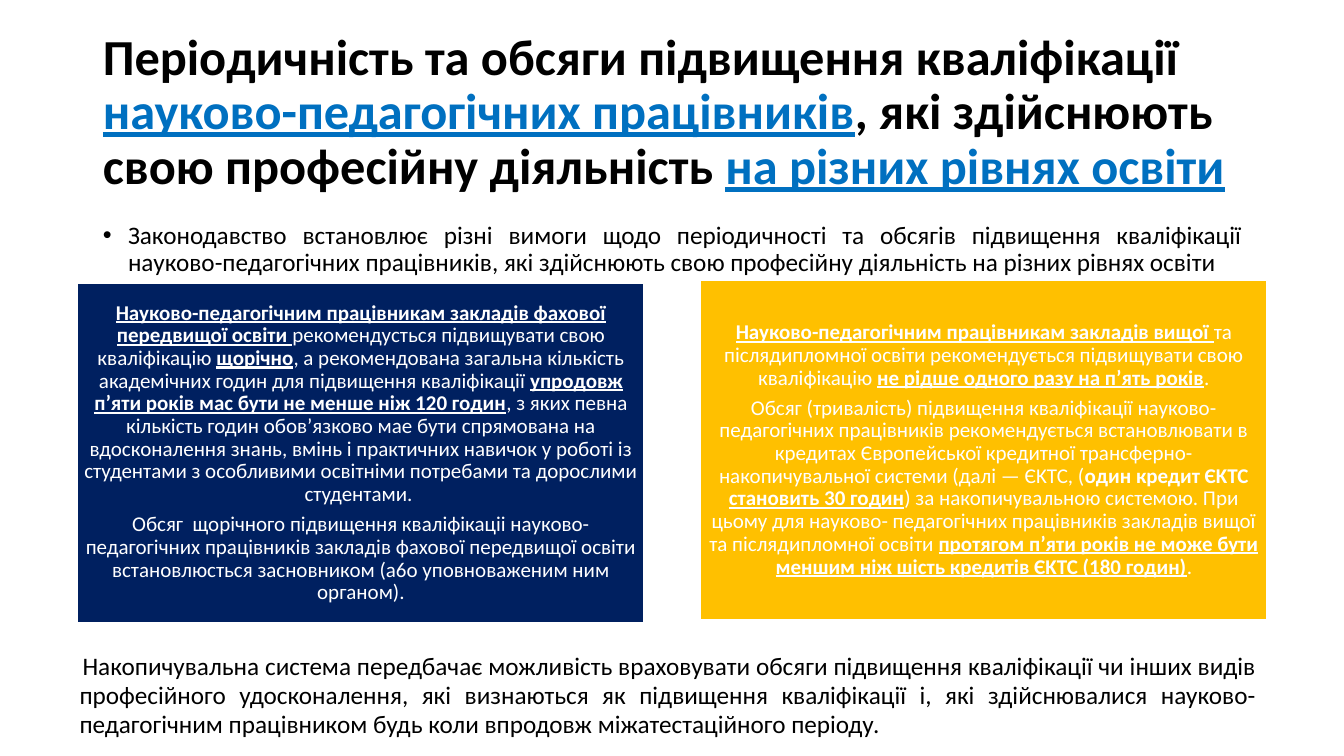
from pptx import Presentation
from pptx.dml.color import RGBColor
from pptx.enum.shapes import MSO_SHAPE
from pptx.enum.text import MSO_ANCHOR, MSO_AUTO_SIZE, PP_ALIGN
from pptx.util import Inches, Pt

RECTANGLE = MSO_SHAPE.RECTANGLE
TOP, MIDDLE = MSO_ANCHOR.TOP, MSO_ANCHOR.MIDDLE
FIXED = MSO_AUTO_SIZE.NONE
LEFT, CENTER, JUSTIFY = PP_ALIGN.LEFT, PP_ALIGN.CENTER, PP_ALIGN.JUSTIFY

BLACK = RGBColor(0x00, 0x00, 0x00)
WHITE = RGBColor(0xFF, 0xFF, 0xFF)
BLUE = RGBColor(0x00, 0x70, 0xC0)
NAVY = RGBColor(0x00, 0x20, 0x60)
AMBER = RGBColor(0xFF, 0xC0, 0x00)

FONT = "Calibri"
SLIDE_WIDTH, SLIDE_HEIGHT = Inches(13.33), Inches(7.5)
TITLE_AREA = (6.9, 5.33, 86.25, 19.33)
BODY_AREA = (6.9, 28.8, 86.25, 9.73)
CARD_WIDTH, CARD_HEIGHT = 42.15, 44.93
NOTE_AREA = (4.58, 85.6, 89.63, 12.93)

PLAIN, BOLD, KEY = (False, False), (True, False), (True, True)

TITLE = [
    ("Періодичність та обсяги підвищення кваліфікації ", BOLD, BLACK),
    ("науково-педагогічних працівників", KEY, BLUE),
    (", які здійснюють свою професійну діяльність ", BOLD, BLACK),
    ("на різних рівнях освіти", KEY, BLUE),
]
INTRODUCTION = [
    ("Законодавство встановлює різні вимоги щодо періодичності та обсягів "
     "підвищення кваліфікації науково-педагогічних працівників, які здійснюють "
     "свою професійну діяльність на різних рівнях освіти", PLAIN, BLACK),
]
COLLEGE_RULES = [
    [
        ("Науково-педагогічним працівникам закладів фахової передвищої освіти ", KEY, WHITE),
        ("рекомендусться підвищувати свою кваліфікацію ", PLAIN, WHITE),
        ("щорічно", KEY, WHITE),
        (", а рекомендована загальна кількість академічних годин для підвищення "
         "кваліфікації ", PLAIN, WHITE),
        ("упродовж п’яти років мас бути не менше ніж 120 годин", KEY, WHITE),
        (", з яких певна кількість годин обов’язково мае бути спрямована на "
         "вдосконалення знань, вмінь i практичних навичок у роботі із студентами "
         "з особливими освітніми потребами та дорослими студентами. ", PLAIN, WHITE),
    ],
    [
        ("Обсяг  щорічного підвищення кваліфікаціі науково-педагогічних працівників "
         "закладів фахової передвищої освіти встановлюсться засновником (a6o "
         "уповноваженим ним органом).", PLAIN, WHITE),
    ],
]
UNIVERSITY_RULES = [
    [
        ("Науково-педагогічним працівникам закладів вищої ", KEY, WHITE),
        ("та післядипломної освіти рекомендується підвищувати свою кваліфікацію ",
         PLAIN, WHITE),
        ("не рідше одного разу на п’ять років", KEY, WHITE),
        (".", PLAIN, WHITE),
    ],
    [
        ("Обсяг (тривалість) підвищення кваліфікації науково-педагогічних працівників "
         "рекомендується встановлювати в кредитах Європейської кредитної "
         "трансферно-накопичувальної системи (далі — ЄKTC, (", PLAIN, WHITE),
        ("один кредит ЄKTC ", BOLD, WHITE),
        ("становить 30 годин", KEY, WHITE),
        (") за накопичувальною системою. При цьому для науково- педагогічних "
         "працівників закладів вищої та післядипломної освіти ", PLAIN, WHITE),
        ("протягом п’яти років не може бути меншим ніж шість кредитів ЄKTC "
         "(180 годин)", KEY, WHITE),
        (".", PLAIN, WHITE),
    ],
]
NOTE = [
    ("Накопичувальна система передбачає можливість враховувати обсяги підвищення "
     "кваліфікації чи інших видів професійного удосконалення, які визнаються як "
     "підвищення кваліфікації i, які здійснювалися науково- педагогічним "
     "працівником будь коли впродовж міжатестаційного періоду.", PLAIN, BLACK),
]
CARDS = [
    (5.78, 37.47, NAVY, COLLEGE_RULES),
    (52.13, 37.07, AMBER, UNIVERSITY_RULES),
]


def to_lengths(area):
    left, top, width, height = area
    return (int(SLIDE_WIDTH * left / 100), int(SLIDE_HEIGHT * top / 100),
            int(SLIDE_WIDTH * width / 100), int(SLIDE_HEIGHT * height / 100))


def move(shape, area):
    shape.left, shape.top, shape.width, shape.height = to_lengths(area)


def write_paragraph(paragraph, segments, size, alignment, line_spacing=0.9,
                    before=0, after=0):
    paragraph.alignment = alignment
    paragraph.line_spacing = line_spacing
    paragraph.space_before, paragraph.space_after = Pt(before), Pt(after)
    for text, (bold, underline), color in segments:
        run = paragraph.add_run()
        run.text = text
        font = run.font
        font.name, font.size = FONT, Pt(size)
        font.bold, font.underline = bold, underline
        font.color.rgb = color


def indent(paragraph, margin, first_line):
    properties = paragraph._p.get_or_add_pPr()
    properties.set("marL", str(Inches(margin)))
    properties.set("indent", str(Inches(first_line)))


def prepare_frame(shape, anchor):
    frame = shape.text_frame
    frame.word_wrap = True
    frame.auto_size = FIXED
    frame.vertical_anchor = anchor
    return frame


def fill_title(slide):
    title = slide.shapes.title
    move(title, TITLE_AREA)
    frame = prepare_frame(title, MIDDLE)
    write_paragraph(frame.paragraphs[0], TITLE, 36, LEFT)


def fill_body(slide):
    body = slide.placeholders[1]
    move(body, BODY_AREA)
    paragraph = prepare_frame(body, TOP).paragraphs[0]
    write_paragraph(paragraph, INTRODUCTION, 18, JUSTIFY, before=10)
    indent(paragraph, 0.25, -0.25)


def add_card(slide, left, top, color, rules):
    area = (left, top, CARD_WIDTH, CARD_HEIGHT)
    card = slide.shapes.add_shape(RECTANGLE, *to_lengths(area))
    card.shadow.inherit = False
    card.fill.solid()
    card.fill.fore_color.rgb = color
    card.line.color.rgb = WHITE
    card.line.width = Pt(1)
    frame = prepare_frame(card, MIDDLE)
    frame.margin_left = frame.margin_right = Inches(0.06)
    frame.margin_top = frame.margin_bottom = Inches(0.06)
    for index, segments in enumerate(rules):
        paragraph = frame.add_paragraph() if index else frame.paragraphs[0]
        write_paragraph(paragraph, segments, 15, CENTER, after=5.25)


def add_note(slide):
    box = slide.shapes.add_textbox(*to_lengths(NOTE_AREA))
    paragraph = prepare_frame(box, TOP).paragraphs[0]
    write_paragraph(paragraph, NOTE, 18, JUSTIFY, line_spacing=0.96, before=11.7)
    indent(paragraph, 0.08, 0.03)


def main():
    presentation = Presentation()
    presentation.slide_width = SLIDE_WIDTH
    presentation.slide_height = SLIDE_HEIGHT
    slide = presentation.slides.add_slide(presentation.slide_layouts[1])
    fill_title(slide)
    fill_body(slide)
    for card in CARDS:
        add_card(slide, *card)
    add_note(slide)
    presentation.save("out.pptx")


if __name__ == "__main__":
    main()
